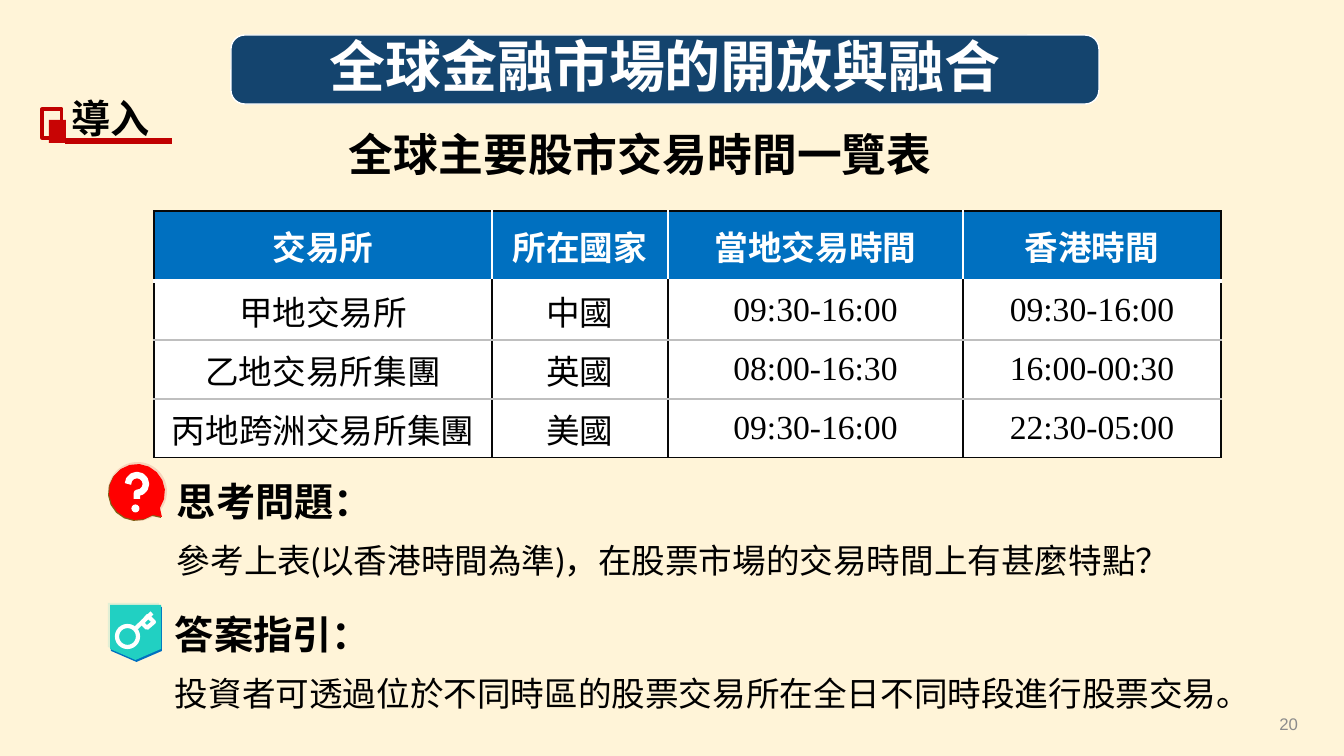
from math import cos, radians, sin

from lxml import etree
from pptx import Presentation
from pptx.dml.color import RGBColor
from pptx.enum.shapes import MSO_CONNECTOR, MSO_SHAPE
from pptx.enum.text import MSO_ANCHOR, PP_ALIGN
from pptx.oxml.ns import qn
from pptx.util import Emu, Pt

WIDE, HIGH = 1344, 756
SCALE = 12192000 / WIDE

RECT = MSO_SHAPE.RECTANGLE
ROUND = MSO_SHAPE.ROUNDED_RECTANGLE
OVAL = MSO_SHAPE.OVAL
BADGE = MSO_SHAPE.FLOWCHART_OFFPAGE_CONNECTOR
LINE = MSO_CONNECTOR.STRAIGHT
LEFT, CENTER, RIGHT = PP_ALIGN.LEFT, PP_ALIGN.CENTER, PP_ALIGN.RIGHT
TOP, MIDDLE = MSO_ANCHOR.TOP, MSO_ANCHOR.MIDDLE

CREAM = RGBColor(0xFF, 0xF2, 0xCC)
WHITE = RGBColor(0xFF, 0xFF, 0xFF)
BLACK = RGBColor(0, 0, 0)
INK = RGBColor(0x08, 0x08, 0x08)
GRAY = RGBColor(0x8C, 0x8C, 0x8C)
SILVER = RGBColor(0xBF, 0xBF, 0xBF)
NAVY = RGBColor(0x14, 0x44, 0x6E)
BLUE = RGBColor(0x00, 0x70, 0xC0)
TEAL = RGBColor(0x21, 0xD0, 0xC2)
RED = RGBColor(0xFF, 0, 0)
WINE = RGBColor(0xC0, 0, 0)
BRICK = RGBColor(0xC8, 0x04, 0x04)
BROWN = RGBColor(0x82, 0x61, 0x18)

SANS, SERIF, CJK, ARIAL = "Lato", "Times New Roman", "Noto Sans CJK SC", "Arial"

COLS = [338, 176, 295, 258]
HEAD, BODY = 70, 59
ROWS = [
    ["交易所", "所在國家", "當地交易時間", "香港時間"],
    ["甲地交易所", "中國", "09:30-16:00", "09:30-16:00"],
    ["乙地交易所集團", "英國", "08:00-16:30", "16:00-00:30"],
    ["丙地跨洲交易所集團", "美國", "09:30-16:00", "22:30-05:00"],
]


def px(n):
    return Emu(round(n * SCALE))


def box(*lengths):
    return [px(n) for n in lengths]


def style(para, size, face, color=BLACK, bold=False, align=LEFT, gap=None):
    font = para.font
    font.size, font.name, font.bold = Pt(size), face, bold
    font.color.rgb = color
    para.alignment = align
    if gap:
        para.line_spacing = gap


def paint(shape, fill=None, line=None, width=1, alpha=None):
    shape.shadow.inherit = False
    if fill is None:
        shape.fill.background()
    else:
        shape.fill.solid()
        shape.fill.fore_color.rgb = fill
    if alpha:
        color = shape._element.spPr.find(qn("a:solidFill"))[0]
        etree.SubElement(color, qn("a:alpha"), val=str(alpha * 1000))
    if line is None:
        shape.line.fill.background()
    else:
        shape.line.color.rgb = line
        shape.line.width = Pt(width)


def add_form(shapes, kind, place, **look):
    shape = shapes.add_shape(kind, *box(*place))
    paint(shape, **look)
    return shape


def add_path(shapes, dots, close=True, **look):
    spots = [(px(x), px(y)) for x, y in dots]
    pen = shapes.build_freeform(*spots[0])
    pen.add_line_segments(spots[1:], close=close)
    paint(pen.convert_to_shape(), **look)


def add_line(shapes, ends, color, width):
    line = shapes.add_connector(LINE, *box(*ends))
    line.line.color.rgb = color
    line.line.width = Pt(width)
    etree.SubElement(line._element.spPr, qn("a:effectLst"))


def add_text(shapes, place, parts, anchor=TOP):
    frame = shapes.add_textbox(*box(*place)).text_frame
    frame.word_wrap = True
    frame.vertical_anchor = anchor
    frame.text = "\n".join(text for text, _ in parts)
    for para, (_, look) in zip(frame.paragraphs, parts):
        style(para, **look)


def arc(x, y, radius, start, stop, step):
    turns = [radians(a) for a in range(start, stop + 1, step)]
    return [(x + radius * cos(a), y + radius * sin(a)) for a in turns]


def add_title(slide):
    place = (231, 35, 868, 69)
    plate = add_form(slide.shapes, ROUND, place, fill=NAVY, line=WHITE)
    plate.adjustments[0] = 0.2
    title = slide.shapes.title
    title.left, title.top, title.width, title.height = box(*place)
    plate._element.addnext(title._element)
    frame = title.text_frame
    frame.text = "全球金融市場的開放與融合"
    frame.vertical_anchor = MIDDLE
    frame.margin_left = frame.margin_right = px(27)
    frame.margin_top = frame.margin_bottom = px(3)
    style(frame.paragraphs[0], 40, SANS, WHITE, True, CENTER, 0.9)


def add_edge(cell, side, color, width=1):
    props = cell._tc.get_or_add_tcPr()
    edge = etree.SubElement(props, qn("a:ln" + side), w=str(Pt(width)))
    fill = etree.SubElement(edge, qn("a:solidFill"))
    etree.SubElement(fill, qn("a:srgbClr"), val=str(color))


def add_hours(shapes):
    place = box(154, 211, sum(COLS), HEAD + BODY * 3)
    table = shapes.add_table(len(ROWS), len(COLS), *place).table
    for col, width in zip(table.columns, COLS):
        col.width = px(width)
    rules = [(INK, 1), (WHITE, 3), (SILVER, 1), (SILVER, 1), (INK, 1)]
    for r, texts in enumerate(ROWS):
        head = r == 0
        table.rows[r].height = px(HEAD if head else BODY)
        for c, text in enumerate(texts):
            cell = table.cell(r, c)
            add_edge(cell, "L", WHITE if head and c > 0 else INK)
            add_edge(cell, "R", WHITE if head and c < len(COLS) - 1 else INK)
            add_edge(cell, "T", *rules[r])
            add_edge(cell, "B", *rules[r + 1])
            cell.fill.solid()
            cell.fill.fore_color.rgb = BLUE if head else WHITE
            cell.vertical_anchor = MIDDLE
            cell.text = text
            color = WHITE if head else BLACK
            style(cell.text_frame.paragraphs[0], 24, SERIF, color, head, CENTER)


def add_label(shapes):
    add_form(shapes, RECT, (42, 109, 20, 29), line=WINE, width=2.25)
    add_form(shapes, RECT, (49, 120, 17, 23), fill=BRICK)
    add_text(shapes, (62, 89, 127, 42),
             [("導入", dict(size=28, face=CJK, bold=True))])
    add_line(shapes, (65, 141, 172, 141), WINE, 4.5)


def add_key(shapes):
    for x, y, color, alpha in [(108, 603, TEAL, 13), (111, 607, BLUE, None),
                               (110, 605, TEAL, None)]:
        add_form(shapes, BADGE, (x, y, 51, 55), fill=color, alpha=alpha)
    add_form(shapes, OVAL, (117, 626, 21, 21), line=WHITE, width=3)
    add_line(shapes, (135, 629, 152, 613), WHITE, 3)
    add_path(shapes, [(142, 623), (147, 628), (154, 622), (148, 616)],
             line=WHITE, width=3)


def add_query(shapes):
    add_form(shapes, OVAL, (108, 462, 59, 59), fill=WINE, alpha=13)
    for x, y, color in [(136, 493, BROWN), (137, 492, RED)]:
        add_path(shapes, arc(x, y, 28, 55, 395, 20) + [(x + 25, y + 25)], fill=color)
    add_path(shapes, arc(137, 484, 9, 180, 450, 30) + [(137, 499)], close=False,
             line=WHITE, width=4.63)
    add_form(shapes, OVAL, (132, 505, 7, 7), fill=WHITE, line=WHITE, width=0.75)


def add_note(shapes, place, head, body):
    add_text(shapes, place, [
        (head, dict(size=28, face=SANS, bold=True, gap=1.5)),
        (body, dict(size=24, face=SANS, gap=Pt(40))),
    ])


def main():
    deck = Presentation()
    deck.slide_width, deck.slide_height = box(WIDE, HIGH)
    slide = deck.slides.add_slide(deck.slide_layouts[5])
    shapes = slide.shapes
    for _ in range(2):
        add_form(shapes, RECT, (0, 0, WIDE, HIGH), fill=CREAM, alpha=50)
    add_title(slide)
    add_text(shapes, (1006, 704, 302, 40),
             [("20", dict(size=12, face=ARIAL, color=GRAY, align=RIGHT))], MIDDLE)
    add_hours(shapes)
    add_text(shapes, (320, 120, 641, 67), [
        ("全球主要股市交易時間一覽表",
         dict(size=32, face=SANS, bold=True, align=CENTER, gap=Pt(40)))])
    add_note(shapes, (165, 582, 1104, 138), "答案指引：",
             "投資者可透過位於不同時區的股票交易所在全日不同時段進行股票交易。")
    add_note(shapes, (167, 449, 1079, 138), "思考問題：",
             "參考上表(以香港時間為準)，在股票市場的交易時間上有甚麼特點？")
    for draw in (add_label, add_key, add_query):
        draw(shapes.add_group_shape().shapes)
    deck.save("out.pptx")


if __name__ == "__main__":
    main()
